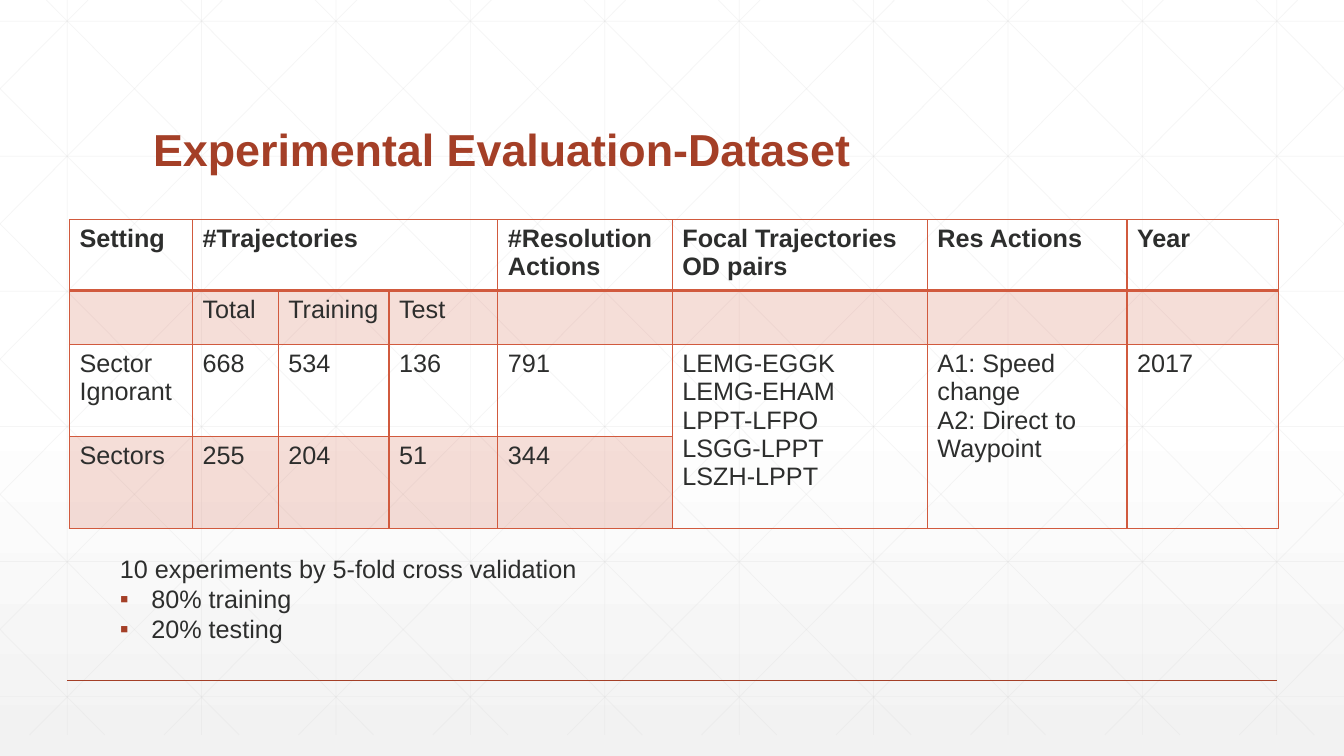
import lxml.etree
import pptx
import pptx.dml.color
import pptx.enum.shapes
import pptx.enum.text
import pptx.oxml.ns
import pptx.util

RGB = pptx.dml.color.RGBColor
RUST = RGB(0xA4, 0x3F, 0x27)
ORANGE = RGB(0xD1, 0x5A, 0x3E)
INK = RGB(0x2D, 0x2E, 0x2D)
GRID_GREY = RGB(0xD9, 0xD9, 0xD9)
WHITE = RGB(0xFF, 0xFF, 0xFF)
MIST = RGB(0xF2, 0xF2, 0xF2)

qn = pptx.oxml.ns.qn


def add_child(parent, tag, **attributes):
    child = lxml.etree.SubElement(parent, qn(tag))
    for key, value in attributes.items():
        child.set(key, str(value))
    return child


class DatasetSlide:
    """Holds the style and the slide; lengths are percentages of the slide's size."""

    font = "Arial"
    body_size = 18

    def __init__(self, deck):
        self.deck = deck
        self.slide = deck.slides.add_slide(deck.slide_layouts[6])

    def x(self, share):
        return round(self.deck.slide_width * share / 100)

    def y(self, share):
        return round(self.deck.slide_height * share / 100)

    def background(self, stops):
        self.slide.background.fill.gradient()
        self.slide.background.fill.gradient_angle = 270
        stop_list = next(self.slide.element.iter(qn("a:gsLst")))
        for old_stop in list(stop_list):
            stop_list.remove(old_stop)
        for position, color in stops:
            stop = add_child(stop_list, "a:gs", pos=position * 1000)
            add_child(stop, "a:srgbClr", val=color)

    def line(self, start, end, color, width, opacity=100):
        connector = self.slide.shapes.add_connector(
            pptx.enum.shapes.MSO_CONNECTOR.STRAIGHT,
            self.x(start[0]), self.y(start[1]), self.x(end[0]), self.y(end[1]))
        connector.line.color.rgb = color
        connector.line.width = pptx.util.Pt(width)
        properties = connector.element.spPr
        if opacity < 100:
            add_child(next(properties.iter(qn("a:srgbClr"))), "a:alpha", val=opacity * 1000)
        add_child(properties, "a:effectLst")

    def add_text(self, paragraph, text, size=body_size, color=INK, bold=False):
        run = paragraph.add_run()
        run.text = text
        run.font.name = self.font
        run.font.size = pptx.util.Pt(size)
        run.font.color.rgb = color
        run.font.bold = bold

    def add_lines(self, frame, lines, **style):
        for index, text in enumerate(lines):
            paragraph = frame.add_paragraph() if index else frame.paragraphs[0]
            self.add_text(paragraph, text, **style)

    def text_box(self, left, top, width, height):
        box = self.slide.shapes.add_textbox(
            self.x(left), self.y(top), self.x(width), self.y(height))
        box.text_frame.word_wrap = True
        return box.text_frame

    def bullet(self, paragraph, indent):
        properties = paragraph._p.get_or_add_pPr()
        properties.set("marL", str(self.x(indent)))
        properties.set("indent", str(-self.x(indent)))
        add_child(add_child(properties, "a:buClr"), "a:srgbClr", val=RUST)
        add_child(properties, "a:buFont", typeface=self.font)
        add_child(properties, "a:buChar", char="▪")

    def cell_style(self, cell, borders, shaded):
        properties = cell._tc.get_or_add_tcPr()
        for side, width in zip("LRTB", borders):
            edge = add_child(properties, f"a:ln{side}", w=pptx.util.Pt(width))
            add_child(add_child(edge, "a:solidFill"), "a:srgbClr", val=ORANGE)
        if shaded:
            cell.fill.solid()
            cell.fill.fore_color.rgb = ORANGE
            tint = properties.find(qn("a:solidFill"))
            add_child(tint[0], "a:alpha", val=20000)
        else:
            cell.fill.background()

    def table(self, left, top, widths, heights, rows, merges):
        table = self.slide.shapes.add_table(
            len(rows), len(widths), self.x(left), self.y(top),
            self.x(sum(widths)), self.y(sum(heights))).table
        table.first_row = table.horz_banding = False
        for column, width in zip(table.columns, widths):
            column.width = self.x(width)
        for row, height in zip(table.rows, heights):
            row.height = self.y(height)
        for first, last in merges:
            table.cell(*first).merge(table.cell(*last))
        for r, row in enumerate(rows):
            borders = (1, 1, 2 if r == 1 else 1, 2 if r == 0 else 1)
            for c, content in enumerate(row):
                cell = table.cell(r, c)
                shaded = r % 2 == 1 and not cell.is_spanned
                self.cell_style(cell, borders, shaded)
                if content:
                    self.add_lines(cell.text_frame, content.split("\n"), bold=r == 0)


def draw_backdrop(page):
    page.background([(0, WHITE), (53, WHITE), (100, MIST)])
    grid_style = (GRID_GREY, 0.5, 25)
    edge, bottom, run = 2.8, 97.2, 55.91

    # Upright and level grid lines
    for k in range(10):
        page.line((5 + 10 * k, 0), (5 + 10 * k, bottom), *grid_style)
    for k in range(6):
        level = edge + 17.87 * k
        page.line((0, level), (100, level), *grid_style)

    # Diagonals, clipped to the slide, and their mirror images
    for k in range(-5, 10):
        origin = 1.88 + 10 * k
        span = (max(edge / 100, -origin / run), min(1, (100 - origin) / run))
        start, end = [(origin + run * t, 100 * t - edge) for t in span]
        page.line(start, end, *grid_style)
        page.line((100 - start[0], start[1]), (100 - end[0], end[1]), *grid_style)

    # Footer rule
    page.line((5, 90), (95, 90), RUST, 1)


def main():
    deck = pptx.Presentation()
    deck.slide_width = pptx.util.Inches(13.33)
    deck.slide_height = pptx.util.Inches(7.5)
    page = DatasetSlide(deck)
    draw_backdrop(page)

    # Title
    title = page.text_box(10.65, 7.33, 78.75, 16.67)
    title.vertical_anchor = pptx.enum.text.MSO_ANCHOR.BOTTOM
    title.paragraphs[0].line_spacing = 0.9
    page.add_text(title.paragraphs[0], "Experimental Evaluation-Dataset", 32, RUST, True)

    # Dataset table
    od_pairs = "LEMG-EGGK\nLEMG-EHAM\nLPPT-LFPO\nLSGG-LPPT\nLSZH-LPPT"
    actions = "A1: Speed change\nA2: Direct to Waypoint"
    page.table(
        5.17, 29.07,
        widths=[9.15, 6.38, 8.25, 8.1, 12.98, 18.98, 14.85, 11.25],
        heights=[8.8, 7.2, 12.17, 12.17],
        rows=[
            ["Setting", "#Trajectories", "", "", "#Resolution\nActions",
             "Focal Trajectories OD pairs", "Res Actions", "Year"],
            ["", "Total", "Training", "Test", "", "", "", ""],
            ["Sector Ignorant", "668", "534", "136", "791", od_pairs, actions, "2017"],
            ["Sectors", "255", "204", "51", "344", "", "", ""],
        ],
        merges=[((0, 1), (0, 3))] + [((2, c), (3, c)) for c in (5, 6, 7)])

    # Validation note
    validation = page.text_box(8.18, 72.53, 51.6, 13.47)
    validation.auto_size = pptx.enum.text.MSO_AUTO_SIZE.SHAPE_TO_FIT_TEXT
    page.add_lines(validation, ["10 experiments by 5-fold cross validation",
                                "80% training", "20% testing"])
    for share in validation.paragraphs[1:]:
        page.bullet(share, 2.34)

    deck.save("out.pptx")


if __name__ == "__main__":
    main()
